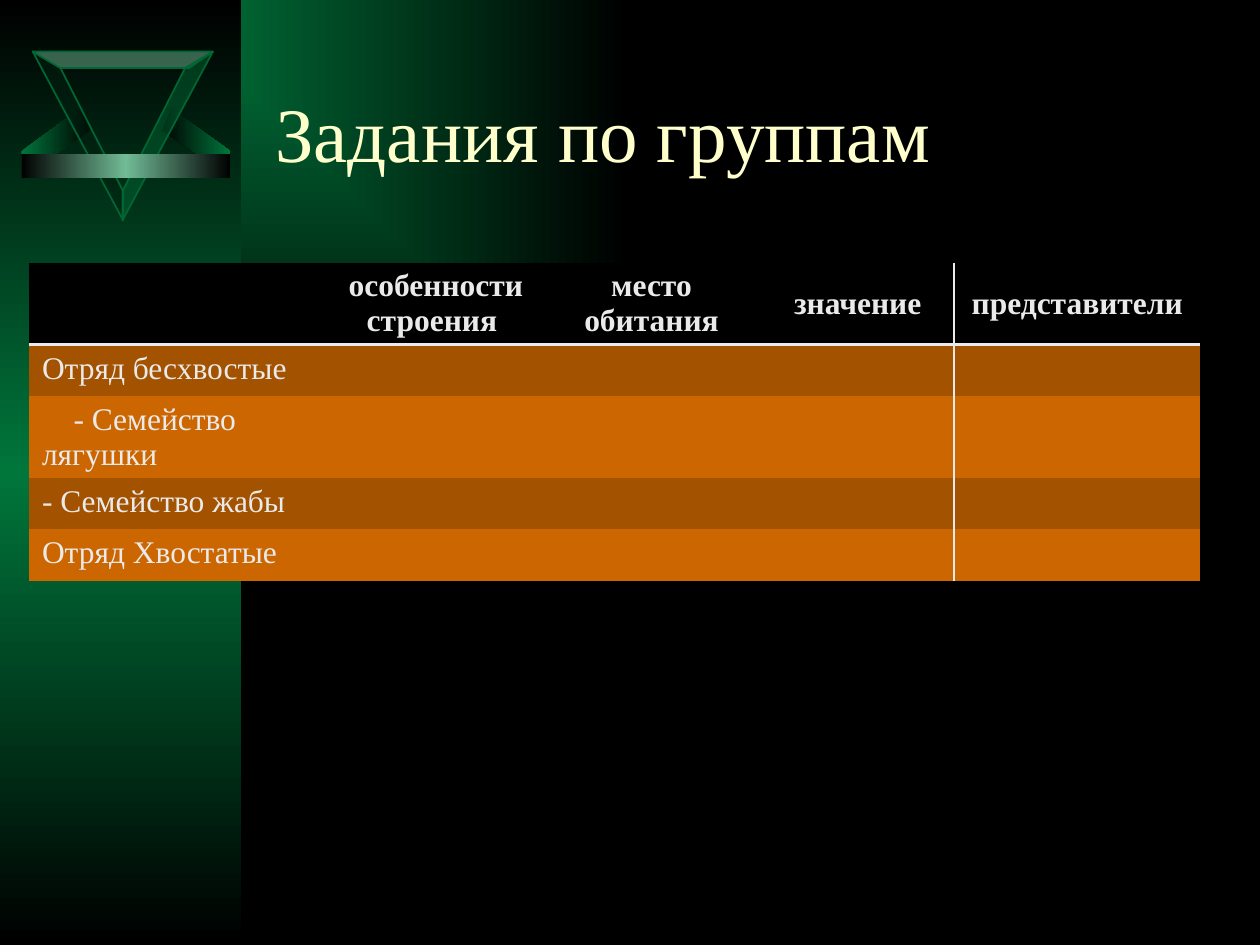
import dataclasses
from typing import Optional

import lxml.etree
import pptx
import pptx.dml.color
import pptx.enum.text
import pptx.oxml
import pptx.oxml.ns
import pptx.util

Pt = pptx.util.Pt
qn = pptx.oxml.ns.qn
ALIGN = pptx.enum.text.PP_ALIGN
ANCHOR = pptx.enum.text.MSO_ANCHOR

FONT = "Times New Roman"
COLORS = {
    "black": "000000",
    "green": "00763B",
    "mint": "71BB96",
    "edge": "006633",
    "shade": "002010",
    "title": "FFFFCC",
    "text": "EAEAEA",
    "dark_row": "A35200",
    "light_row": "CC6600",
}
LINEAR = '<a:lin ang="0" scaled="0"/>'
DOWNWARD = '<a:lin ang="5400000" scaled="0"/>'
CORNER = '<a:path path="rect"><a:fillToRect r="100000" b="100000"/></a:path>'
NO_STYLE = "{2D5ABB26-0587-4C30-8999-92F81FD0307C}"


@dataclasses.dataclass
class Facet:
    points: list[tuple[float, float]]
    color: Optional[str] = None
    gradient: tuple[str, ...] = ()


@dataclasses.dataclass
class Band:
    left: float
    top: float
    width: float
    height: float
    gradient: tuple[str, ...]
    direction: str


@dataclasses.dataclass
class Row:
    texts: list[str]
    fill: str
    header: bool = False
    indents: dict[int, float] = dataclasses.field(default_factory=dict)


def rgb(name: str):
    return pptx.dml.color.RGBColor.from_string(COLORS[name])


def drawing(markup: str):
    return pptx.oxml.parse_xml(
        markup.replace(" ", f" {pptx.oxml.ns.nsdecls('a')} ", 1))


def set_gradient(fill, owner, names: tuple[str, ...], direction: str) -> None:
    fill.gradient()
    stops = "".join(
        f'<a:gs pos="{100000 * i // (len(names) - 1)}">'
        f'<a:srgbClr val="{COLORS[name]}"/></a:gs>'
        for i, name in enumerate(names))
    current = next(owner.iter(qn("a:gradFill")))
    current.getparent().replace(current, drawing(
        f'<a:gradFill rotWithShape="1"><a:gsLst>{stops}</a:gsLst>'
        f'{direction}</a:gradFill>'))


def mirror(points: list[tuple[float, float]], axis: float) -> list[tuple[float, float]]:
    return [(2 * axis - x, y) for x, y in points]


def draw_facet(slide, facet: Facet) -> None:
    corners = [(Pt(x), Pt(y)) for x, y in facet.points]
    builder = slide.shapes.build_freeform(*corners[0])
    builder.add_line_segments(corners[1:], close=True)
    shape = builder.convert_to_shape()
    shape.shadow.inherit = False
    if facet.gradient:
        set_gradient(shape.fill, shape._element, facet.gradient, LINEAR)
        shape.line.fill.background()
        return
    shape.fill.solid()
    shape.fill.fore_color.rgb = rgb(facet.color)
    color = next(shape._element.iter(qn("a:srgbClr")))
    lxml.etree.SubElement(color, qn("a:alpha"), val="50000")
    shape.line.color.rgb = rgb("edge")
    shape.line.width = Pt(1)


def draw_band(slide, band: Band) -> None:
    shape = slide.shapes.add_shape(
        pptx.enum.shapes.MSO_SHAPE.RECTANGLE,
        Pt(band.left), Pt(band.top), Pt(band.width), Pt(band.height))
    shape.shadow.inherit = False
    shape.line.fill.background()
    set_gradient(shape.fill, shape._element, band.gradient, band.direction)


def format_font(font, size: float, color: str, bold: bool) -> None:
    for key, value in {"name": FONT, "size": Pt(size), "bold": bold}.items():
        setattr(font, key, value)
    font.color.rgb = rgb(color)


def border(cell, side: str, width: float) -> None:
    line = drawing(
        f'<a:{side} w="{Pt(width)}"><a:solidFill><a:srgbClr val="{COLORS["text"]}"/>'
        f'</a:solidFill></a:{side}>')
    properties = cell._tc.get_or_add_tcPr()
    properties.insert(len(properties.findall("*")) - 1, line)


def fill_cell(cell, row: Row, column: int) -> None:
    cell.fill.solid()
    cell.fill.fore_color.rgb = rgb(row.fill)
    if column in (3, 4):
        border(cell, "lnR" if column == 3 else "lnL", 1)
    if row.header:
        border(cell, "lnB", 2)
        cell.vertical_anchor = ANCHOR.MIDDLE
    paragraph = cell.text_frame.paragraphs[0]
    if column < len(row.texts) and row.texts[column]:
        paragraph.text = row.texts[column]
    paragraph.alignment = ALIGN.CENTER if row.header else ALIGN.LEFT
    if column in row.indents:
        properties = paragraph._p.get_or_add_pPr()
        properties.set("marL", "0")
        properties.set("indent", str(Pt(row.indents[column])))
    format_font(paragraph.font, 18, "text", row.header)


def draw_table(slide, rows: list[Row], widths: list[float], row_height: float) -> None:
    frame = slide.shapes.add_table(
        len(rows), len(widths), Pt(16.8), Pt(150),
        Pt(sum(widths)), Pt(row_height * len(rows)))
    groups = frame.table
    groups.horz_banding = False
    next(frame._element.iter(qn("a:tableStyleId"))).text = NO_STYLE
    for column, width in zip(groups.columns, widths):
        column.width = Pt(width)
    for index, row in enumerate(rows):
        groups.rows[index].height = Pt(row_height)
        for column in range(len(widths)):
            fill_cell(groups.cell(index, column), row, column)


def draw_title(slide, text: str) -> None:
    title = slide.shapes.title
    slide.shapes._spTree.append(title._element)
    for key, value in {"left": 150, "top": 18, "width": 558, "height": 114}.items():
        setattr(title, key, Pt(value))
    title.text_frame.text = text
    title.text_frame.vertical_anchor = ANCHOR.MIDDLE
    paragraph = title.text_frame.paragraphs[0]
    paragraph.alignment = ALIGN.LEFT
    format_font(paragraph.font, 44, "title", False)


def main() -> None:
    deck = pptx.Presentation()
    deck.slide_width, deck.slide_height = Pt(720), Pt(540)
    slide = deck.slides.add_slide(deck.slide_layouts[5])
    set_gradient(slide.background.fill, slide._element, ("green", "black"), CORNER)

    wing = [(131.8, 86.4), (131.8, 101.5), (92.2, 74.2),
            (92.2, 75.6), (97.9, 61.9)]
    side = [(70.4, 126), (70.4, 109.4), (34.6, 38.9), (18.7, 29.5)]
    top = [(18.7, 29.5), (34.6, 38.9), (108, 38.9), (121.7, 29.5)]
    sheen = ("black", "mint", "black")

    draw_band(slide, Band(0, 0, 138, 540, ("black", "green", "black"), DOWNWARD))
    for facet in (
        Facet(wing, gradient=("black", "green")),
        Facet(mirror(wing, 72), gradient=("green", "black")),
        Facet(side, "shade"),
        Facet(top, "mint"),
        Facet(mirror(side, 70.2), "edge"),
    ):
        draw_facet(slide, facet)
    draw_band(slide, Band(12.2, 87.8, 119.5, 13.7, sheen, LINEAR))

    draw_title(slide, "Задания по группам")
    draw_table(slide, [
        Row(["", "особенности строения", "место обитания", "значение",
             "представители"], "black", True, {1: 4.5}),
        Row(["Отряд бесхвостые"], "dark_row"),
        Row(["- Семейство лягушки"], "light_row", indents={0: 18}),
        Row(["- Семейство жабы"], "dark_row"),
        Row(["Отряд Хвостатые"], "light_row"),
    ], [167.3, 125.5, 125.5, 110.2, 140.7], 29.2)
    deck.save("out.pptx")


if __name__ == "__main__":
    main()
